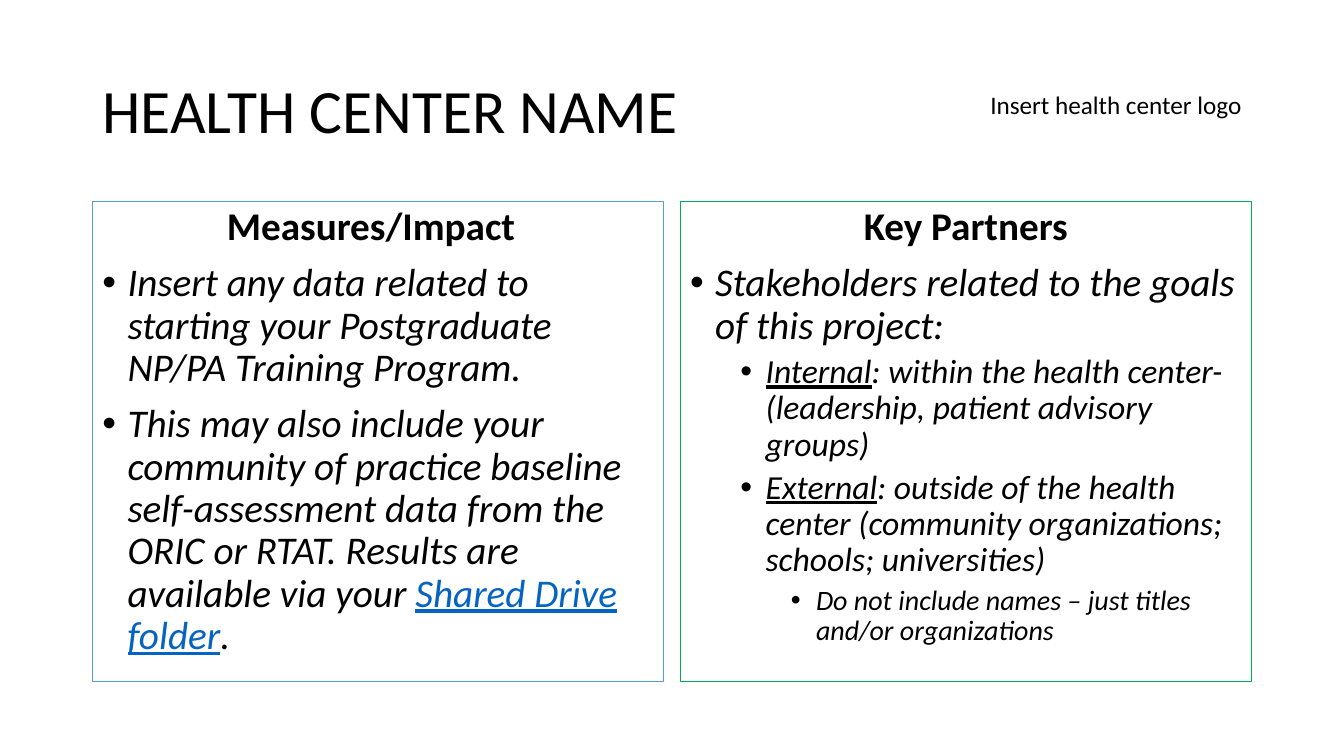
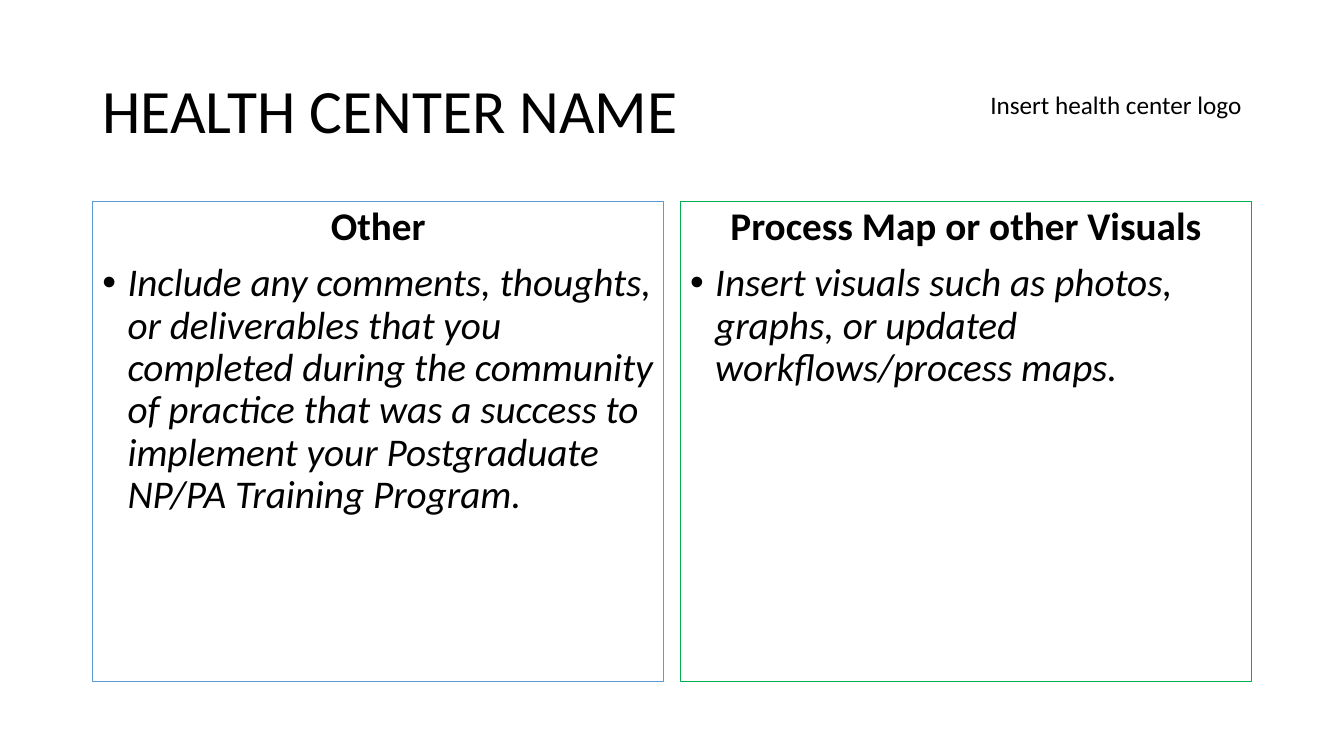
from lxml.etree import SubElement
from pptx import Presentation
from pptx.dml.color import RGBColor
from pptx.enum.shapes import MSO_SHAPE
from pptx.enum.text import MSO_ANCHOR, PP_ALIGN
from pptx.oxml.ns import qn
from pptx.util import Cm, Pt

FONT = "Calibri"
BLACK, BLUE, GREEN, LINK = "000000", "5B9BD5", "00B050", "0563C1"
LEFT, COL_W, GAP = 2.33, 14.4, 0.41
RIGHT = LEFT + COL_W + GAP
PANEL_TOP, PANEL_H = 5.08, 12.1
LEVEL_SIZES = (28, 24, 20)
LEVEL_SPACE = (10, 5, 5)
HEADING = {"size": Pt(28), "bold": True}
UNDERLINED = {"underline": True}

SLIDES = [
    [
        ("Measures/Impact\t", [
            (0, [("Insert any data related to starting your Postgraduate NP/PA Training Program.", {})]),
            (0, [("This may also include your community of practice baseline self-assessment data "
                  "from the ORIC or RTAT. Results are available via your ", {}),
                 ("Shared Drive folder", {"color": LINK, **UNDERLINED}),
                 (".", {})]),
        ]),
        ("Key Partners", [
            (0, [("Stakeholders related to the goals of this project:", {})]),
            (1, [("Internal", UNDERLINED),
                 (": within the health center- (leadership, patient advisory groups)", {})]),
            (1, [("External", UNDERLINED),
                 (": outside of the health center (community organizations; schools; universities)", {})]),
            (2, [("Do not include names – just titles and/or organizations", {})]),
        ]),
    ],
    [
        ("Other", [
            (0, [("Include any comments, thoughts, or deliverables that you completed during the "
                  "community of practice that was a success to implement your Postgraduate NP/PA "
                  "Training Program.", {})]),
        ]),
        ("Process Map or other Visuals", [
            (0, [("Insert visuals such as photos, graphs, or updated workflows/process maps.", {})]),
        ]),
    ],
]


def rgb(value):
    """Turn a hex string into a colour."""
    return RGBColor.from_string(value)


def set_attrs(obj, values):
    """Set each named attribute of an object."""
    for name, value in values.items():
        setattr(obj, name, value)


def add_run(p, text, color=BLACK, **font):
    """Append a formatted run to a paragraph."""
    r = p.add_run()
    r.text = text
    set_attrs(r.font, {"name": FONT, **font})
    r.font.color.rgb = rgb(color)


def add_bullet(p, level):
    """Give a paragraph a hanging bullet for its level."""
    p.level = level
    pPr = p._p.get_or_add_pPr()
    pPr.set("marL", str(Cm(0.635 + 1.27 * level)))
    pPr.set("indent", str(Cm(-0.635)))
    SubElement(pPr, qn("a:buFont")).set("typeface", "Arial")
    SubElement(pPr, qn("a:buChar")).set("char", "•")


def add_label(s, left, top, width, height, text, size, **para):
    """Add a vertically centred line of text."""
    sp = s.shapes.add_textbox(Cm(left), Cm(top), Cm(width), Cm(height))
    tf = sp.text_frame
    set_attrs(tf, {"word_wrap": True, "vertical_anchor": MSO_ANCHOR.MIDDLE})
    p = tf.paragraphs[0]
    set_attrs(p, para)
    add_run(p, text, size=Pt(size))


def add_panel(s, left, color, heading, items):
    """Add an outlined panel with a heading and bullets."""
    sp = s.shapes.add_shape(MSO_SHAPE.RECTANGLE, Cm(left), Cm(PANEL_TOP), Cm(COL_W), Cm(PANEL_H))
    sp.shadow.inherit = False
    sp.fill.background()
    sp.line.color.rgb = rgb(color)
    sp.line.width = Pt(0.75)
    tf = sp.text_frame
    set_attrs(tf, {"word_wrap": True, "vertical_anchor": MSO_ANCHOR.TOP})
    p = tf.paragraphs[0]
    set_attrs(p, {"alignment": PP_ALIGN.CENTER, "line_spacing": 0.9, "space_before": Pt(10)})
    add_run(p, heading, **HEADING)
    for level, runs in items:
        p = tf.add_paragraph()
        set_attrs(p, {"alignment": PP_ALIGN.LEFT, "line_spacing": 0.9,
                      "space_before": Pt(LEVEL_SPACE[level])})
        add_bullet(p, level)
        for text, fmt in runs:
            add_run(p, text, size=Pt(LEVEL_SIZES[level]), italic=True, **fmt)


def add_slide(prs, panels):
    """Add a slide with the shared header and two panels."""
    s = prs.slides.add_slide(prs.slide_layouts[6])
    for left, color, (heading, items) in zip((LEFT, RIGHT), (BLUE, GREEN), panels):
        add_panel(s, left, color, heading, items)
    add_label(s, LEFT, 1.01, 2 * COL_W + GAP, 3.68, "HEALTH CENTER NAME", 44, line_spacing=0.9)
    add_label(s, RIGHT, 0.58, COL_W, 4.1, "Insert health center logo", 18, alignment=PP_ALIGN.RIGHT)


def main():
    """Build and save the presentation."""
    prs = Presentation()
    set_attrs(prs, {"slide_width": Cm(33.87), "slide_height": Cm(19.05)})
    for panels in SLIDES:
        add_slide(prs, panels)
    prs.save("out.pptx")


if __name__ == "__main__":
    main()
